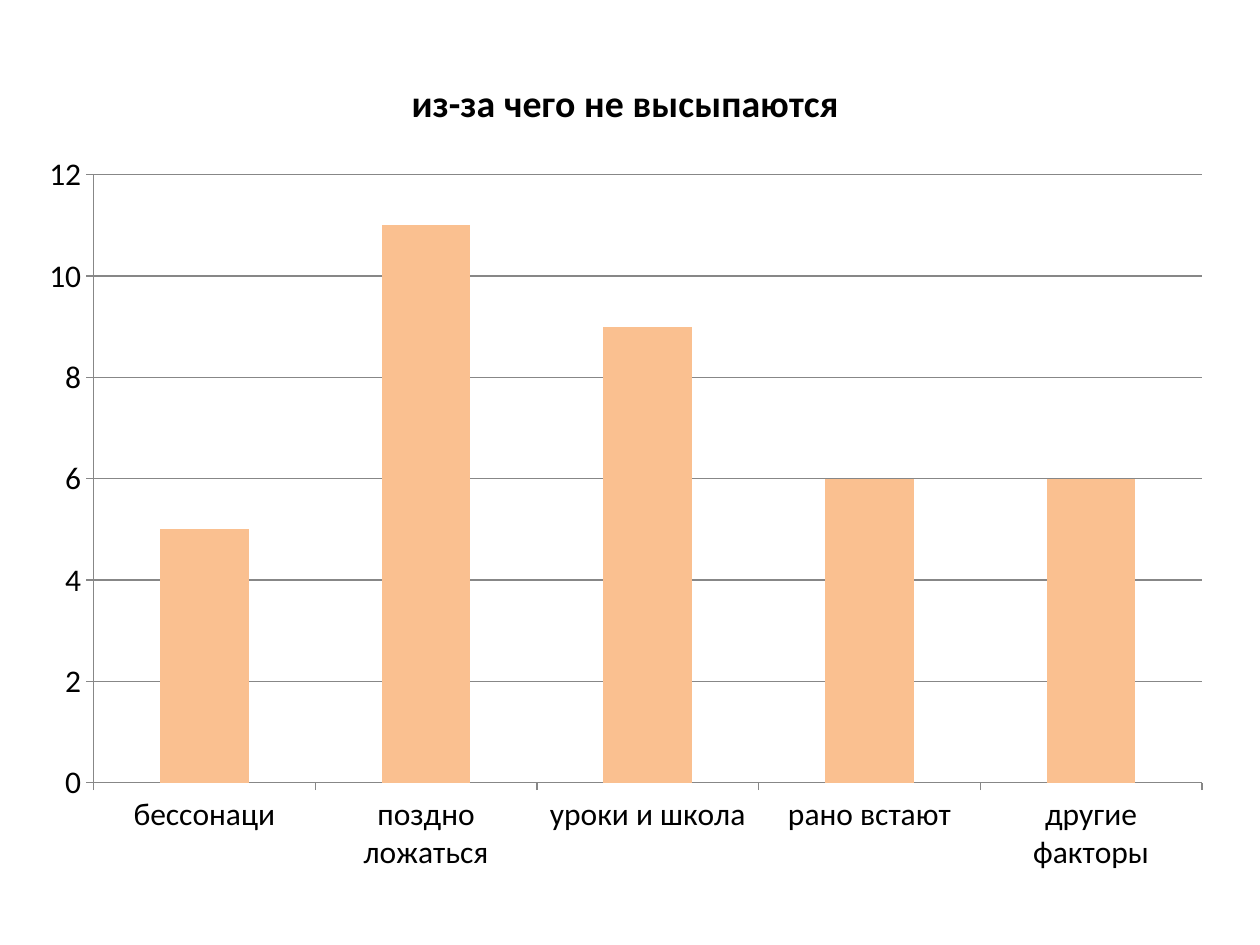
from pptx import Presentation
from pptx.chart.data import CategoryChartData
from pptx.dml.color import RGBColor
from pptx.enum.chart import XL_CHART_TYPE, XL_TICK_MARK
from pptx.util import Inches, Pt

STACKED = XL_CHART_TYPE.COLUMN_STACKED
OUTSIDE = XL_TICK_MARK.OUTSIDE
NO_TICK = XL_TICK_MARK.NONE
FONT = "Calibri"
BLACK, GRAY, PEACH = "000000", "878787", "FAC090"
TITLE = "из-за чего не высыпаются"
REASONS = {
    "бессонаци": 5,
    "поздно ложаться": 11,
    "уроки и школа": 9,
    "рано встают": 6,
    "другие факторы": 6,
}


def rgb(color):
    return RGBColor.from_string(color)


def style_font(font, size, bold=False):
    font.name = FONT
    font.size = Pt(size)
    font.bold = bold
    font.color.rgb = rgb(BLACK)


def style_line(line):
    line.color.rgb = rgb(GRAY)
    line.width = Pt(0.75)


def style_axis(axis):
    axis.major_tick_mark = OUTSIDE
    axis.minor_tick_mark = NO_TICK
    style_line(axis.format.line)
    style_font(axis.tick_labels.font, 18)


def add_title(chart, text):
    chart.has_title = True
    tf = chart.chart_title.text_frame
    r = tf.paragraphs[0].add_run()
    r.text = text
    style_font(r.font, 21.6, bold=True)
    chart.chart_title.include_in_layout = False


def add_column_chart(s, left, top, width, height):
    data = CategoryChartData()
    data.categories = list(REASONS)
    data.add_series(TITLE, list(REASONS.values()))
    frame = s.shapes.add_chart(STACKED, Inches(left), Inches(top),
                               Inches(width), Inches(height), data)
    chart = frame.chart
    style_font(chart.font, 18)
    chart.has_legend = False
    add_title(chart, TITLE)

    plot = chart.plots[0]
    plot.gap_width = 150
    plot.overlap = 100
    plot.vary_by_categories = False
    fill = plot.series[0].format.fill
    fill.solid()
    fill.fore_color.rgb = rgb(PEACH)

    style_axis(chart.category_axis)
    values = chart.value_axis
    style_axis(values)
    values.minimum_scale = 0
    values.maximum_scale = 12
    values.major_unit = 2
    values.has_major_gridlines = True
    style_line(values.major_gridlines.format.line)


def main():
    prs = Presentation()
    prs.slide_width = Inches(10)
    prs.slide_height = Inches(7.5)
    s = prs.slides.add_slide(prs.slide_layouts[6])
    add_column_chart(s, 0.2, 0.36, 9.53, 6.69)
    prs.save("out.pptx")


if __name__ == "__main__":
    main()
